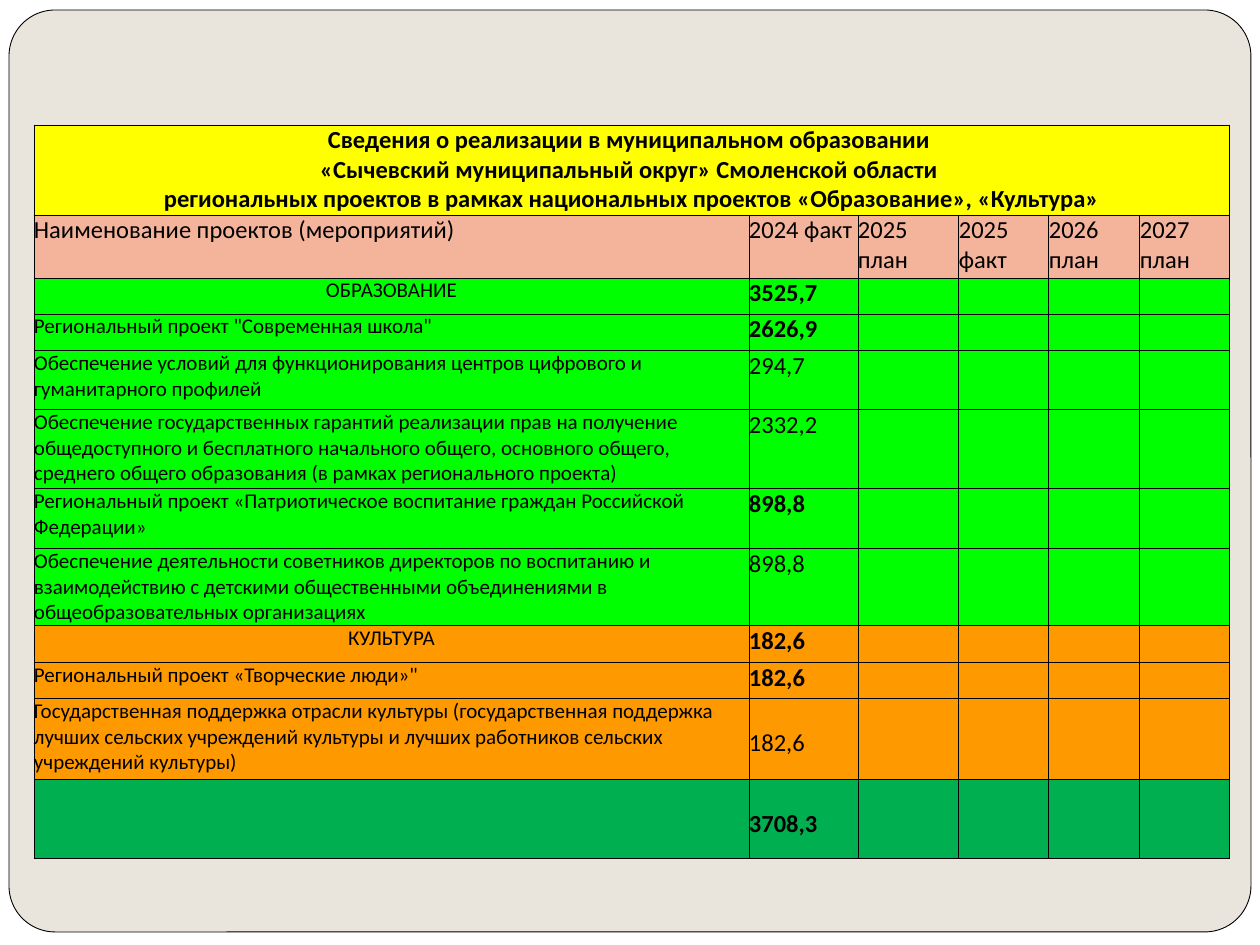
from lxml import etree
from pptx import Presentation
from pptx import util as u
from pptx.dml.color import RGBColor
from pptx.enum import shapes, text
from pptx.oxml.ns import qn

PX = 914400 // 126
FONT = "Calibri"
CENTER, LEFT = text.PP_ALIGN.CENTER, text.PP_ALIGN.LEFT
GREEN, ORANGE, PINK = "00FF00", "FF9900", "F4B39B"

# Content
HEADING = [
    "Сведения о реализации в муниципальном образовании ",
    "«Сычевский муниципальный округ» Смоленской области ",
    "региональных проектов в рамках национальных проектов «Образование», «Культура»",
]
HEADER = ["Наименование проектов (мероприятий)", "2024 факт", "2025 план",
          "2025 факт", "2026 план", "2027 план"]
# name, value, fill, row height, format flags
PROJECTS = [
    ("ОБРАЗОВАНИЕ", "3525,7", GREEN, 36, {"section", "bold"}),
    ('Региональный проект "Современная школа"', "2626,9", GREEN, 37, {"bold"}),
    ("Обеспечение условий для функционирования центров цифрового и "
     "гуманитарного профилей", "294,7", GREEN, 59, set()),
    ("Обеспечение государственных гарантий реализации прав на получение "
     "общедоступного и бесплатного начального общего, основного общего, среднего "
     "общего образования (в рамках регионального проекта)",
     "2332,2", GREEN, 79, set()),
    ("Региональный проект «Патриотическое воспитание граждан Российской Федерации»",
     "898,8", GREEN, 60, {"bold"}),
    ("Обеспечение деятельности советников директоров по воспитанию и "
     "взаимодействию с детскими общественными объединениями в "
     "общеобразовательных организациях", "898,8", GREEN, 77, set()),
    ("КУЛЬТУРА", "182,6", ORANGE, 37, {"section", "bold"}),
    ('Региональный проект «Творческие люди»"', "182,6", ORANGE, 36, {"bold"}),
    ("Государственная поддержка отрасли культуры (государственная поддержка "
     "лучших сельских учреждений культуры и лучших работников сельских "
     "учреждений культуры)", "182,6", ORANGE, 81, {"lowered"}),
    ("", "3708,3", "00B050", 79, {"bold", "lowered"}),
]
COLUMNS = [715, 109, 101, 90, 91, 90]
HEADING_HEIGHT, HEADER_HEIGHT = 90, 63
ROWS = [HEADING_HEIGHT, HEADER_HEIGHT] + [project[3] for project in PROJECTS]
TABLE_LEFT, TABLE_TOP = 34, 125


def px(value):
    return u.Emu(value * PX)


def color(value):
    return RGBColor.from_string(value)


def write(frame, lines, size=14, bold=False, align=LEFT):
    for index, line in enumerate(lines):
        paragraph = frame.paragraphs[0] if index == 0 else frame.add_paragraph()
        paragraph.alignment = align
        if not line:
            etree.SubElement(paragraph._p, qn("a:endParaRPr"), sz=str(size * 100))
            continue
        run = paragraph.add_run()
        run.text = line
        run.font.name, run.font.size, run.font.bold = FONT, u.Pt(size), bold
        run.font.color.rgb = color("000000")


def add_panel(slide, kind, box, fill, line=None):
    panel = slide.shapes.add_shape(kind, *map(px, box))
    panel.shadow.inherit = False
    panel.fill.solid()
    panel.fill.fore_color.rgb = color(fill)
    if line:
        panel.line.color.rgb = color(line)
        panel.line.width = u.Pt(0.5)
    else:
        panel.line.fill.background()
    return panel


def style_cell(cell, fill, top=0):
    cell.margin_left = cell.margin_right = cell.margin_bottom = 0
    cell.margin_top = px(top)
    properties = cell._tc.get_or_add_tcPr()
    for side in ("lnL", "lnR", "lnT", "lnB"):
        border = etree.SubElement(properties, qn(f"a:{side}"), w=str(u.Pt(0.5)))
        solid = etree.SubElement(border, qn("a:solidFill"))
        etree.SubElement(solid, qn("a:srgbClr"), val="000000")
    cell.fill.solid()
    cell.fill.fore_color.rgb = color(fill)


def main():
    presentation = Presentation()
    presentation.slide_width, presentation.slide_height = px(1260), px(945)
    slide = presentation.slides.add_slide(presentation.slide_layouts[6])

    # Backdrop
    slide.background.fill.solid()
    slide.background.fill.fore_color.rgb = color("E9E5DC")
    add_panel(slide, shapes.MSO_SHAPE.RECTANGLE, (0, 0, 1260, 945), "FFFFFF")
    card = add_panel(slide, shapes.MSO_SHAPE.ROUNDED_RECTANGLE,
                     (9, 10, 1242, 922), "E9E5DC", "000000")
    card.adjustments[0] = 0.05

    # Table grid
    table = slide.shapes.add_table(
        len(ROWS), len(COLUMNS), px(TABLE_LEFT), px(TABLE_TOP),
        px(sum(COLUMNS)), px(sum(ROWS))).table
    for column, width in zip(table.columns, COLUMNS):
        column.width = px(width)
    for row, height in zip(table.rows, ROWS):
        row.height = px(height)

    # Heading and column names
    for column, name in enumerate(HEADER):
        style_cell(table.cell(0, column), "FFFF00")
        style_cell(table.cell(1, column), PINK)
        write(table.cell(1, column).text_frame, [name])
    table.cell(0, 0).merge(table.cell(0, len(COLUMNS) - 1))
    write(table.cell(0, 0).text_frame, HEADING, bold=True, align=CENTER)

    # Projects
    for row, (name, value, fill, _, flags) in enumerate(PROJECTS, start=2):
        for column in range(len(COLUMNS)):
            cell = table.cell(row, column)
            style_cell(cell, fill, top=30 if column == 1 and "lowered" in flags else 0)
            if column == 0:
                write(cell.text_frame, [name], size=12,
                      align=CENTER if "section" in flags else LEFT)
            elif column == 1:
                write(cell.text_frame, [value], bold="bold" in flags)
            else:
                write(cell.text_frame, [""])

    presentation.save("out.pptx")


if __name__ == "__main__":
    main()
